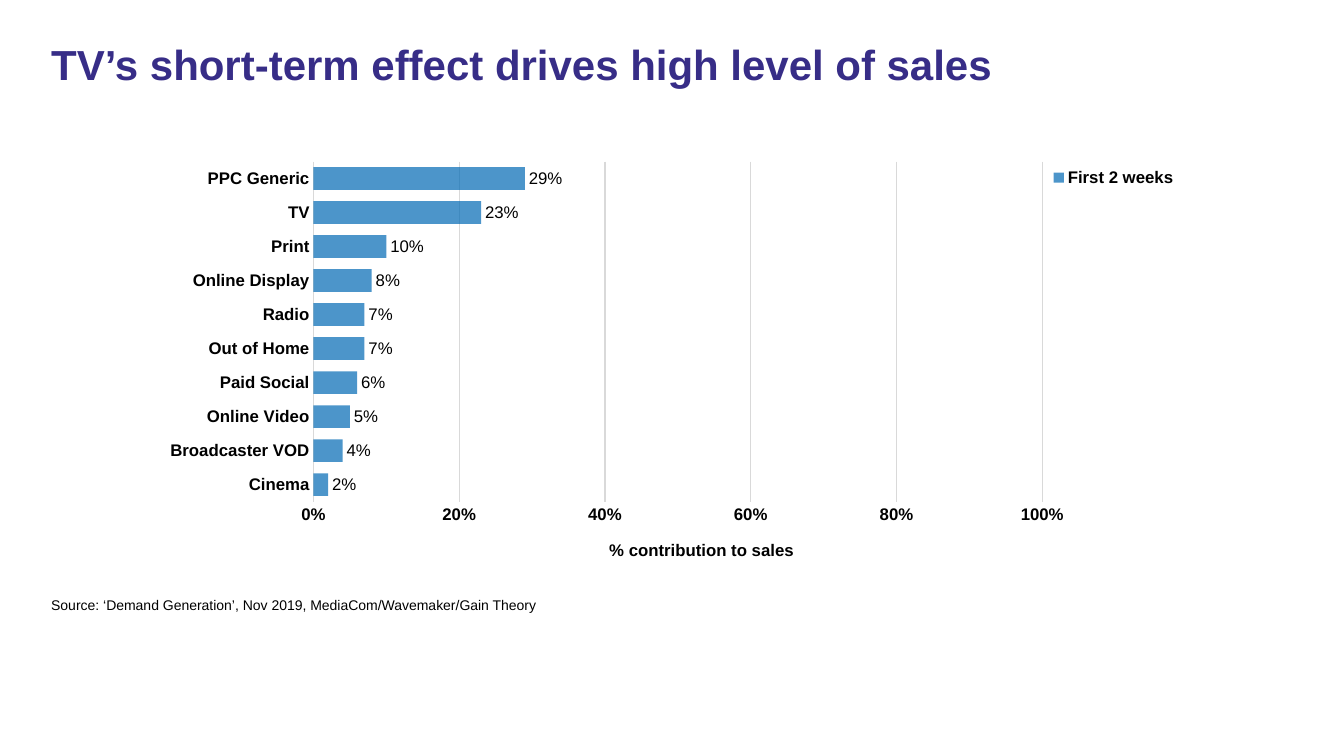
"""Build the slide on TV's short-term contribution to sales."""
from dataclasses import dataclass

from lxml import etree
from pptx import Presentation
from pptx.chart.data import CategoryChartData
from pptx.dml.color import RGBColor
from pptx.enum.chart import (XL_CHART_TYPE as ChartType, XL_LABEL_POSITION as LabelPos,
                             XL_LEGEND_POSITION as LegendPos, XL_TICK_MARK as TickMark)
from pptx.oxml.ns import qn
from pptx.util import Inches, Pt


@dataclass(frozen=True)
class Theme:
    font: str = "Arial"
    title: RGBColor = RGBColor.from_string("372D87")
    text: RGBColor = RGBColor.from_string("000000")
    bar: RGBColor = RGBColor.from_string("0069B4")
    grid: RGBColor = RGBColor.from_string("D9D9D9")
    title_size: int = 30
    chart_size: int = 12
    source_size: int = 10


theme = Theme()


def style(font, size, color=theme.text, bold=False):
    font.name, font.size, font.bold = theme.font, Pt(size), bold
    font.color.rgb = color


def place(element, index, **fractions):
    for old in element.findall(qn("c:layout")):
        element.remove(old)
    layout = etree.Element(qn("c:layout"))
    manual = etree.SubElement(layout, qn("c:manualLayout"))
    if "w" in fractions:
        etree.SubElement(manual, qn("c:layoutTarget")).set("val", "inner")
    for axis in "xy":
        etree.SubElement(manual, qn(f"c:{axis}Mode")).set("val", "edge")
    for key, value in fractions.items():
        etree.SubElement(manual, qn(f"c:{key}")).set("val", str(value))
    element.insert(index, layout)


prs = Presentation()
prs.slide_width, prs.slide_height = Inches(13.33), Inches(7.5)
s = prs.slides.add_slide(prs.slide_layouts[6])

texts = [
    ("TV’s short-term effect drives high level of sales",
     0.39, 1.12, theme.title_size, theme.title, True, 0.9),
    ("Source: ‘Demand Generation’, Nov 2019, MediaCom/Wavemaker/Gain Theory",
     5.87, 0.33, theme.source_size, theme.text, False, 1.0),
]
for text, top, height, size, color, bold, spacing in texts:
    tf = s.shapes.add_textbox(Inches(0.41), Inches(top), Inches(12.4), Inches(height)).text_frame
    tf.word_wrap = True
    tf.text = text
    p = tf.paragraphs[0]
    p.line_spacing = spacing
    style(p.runs[0].font, size, color, bold)

sales_share = {
    "Cinema": 0.02, "Broadcaster VOD": 0.04, "Online Video": 0.05, "Paid Social": 0.06,
    "Out of Home": 0.07, "Radio": 0.07, "Online Display": 0.08, "Print": 0.1,
    "TV": 0.23, "PPC Generic": 0.29,
}
data = CategoryChartData(number_format="0%")
data.categories = list(sales_share)
data.add_series("First 2 weeks", list(sales_share.values()))
chart = s.shapes.add_chart(ChartType.BAR_CLUSTERED, Inches(0.68), Inches(1.41),
                           Inches(11.85), Inches(4.5), data).chart
style(chart.font, theme.chart_size)
chart.has_title = False
place(chart.plots[0]._element.getparent(), 0, x=0.205, y=0.043, w=0.61, h=0.75)

plot = chart.plots[0]
plot.gap_width = 50
plot.vary_by_categories = False
fill = plot.series[0].format.fill
fill.solid()
fill.fore_color.rgb = theme.bar
bar_color = plot.series[0]._element.find(".//" + qn("a:srgbClr"))
etree.SubElement(bar_color, qn("a:alpha")).set("val", "70000")

plot.has_data_labels = True
labels = plot.data_labels
labels.show_value = True
labels.number_format, labels.number_format_is_linked = "0%", False
labels.position = LabelPos.OUTSIDE_END
style(labels.font, theme.chart_size)

for axis in (chart.category_axis, chart.value_axis):
    axis.major_tick_mark = axis.minor_tick_mark = TickMark.NONE
    axis.format.line.fill.background()
    style(axis.tick_labels.font, theme.chart_size, bold=True)

share_axis = chart.value_axis
share_axis.minimum_scale, share_axis.maximum_scale, share_axis.major_unit = 0, 1, 0.2
share_axis.tick_labels.number_format = "0%"
share_axis.tick_labels.number_format_is_linked = False
share_axis.has_major_gridlines = True
grid_line = share_axis.major_gridlines.format.line
grid_line.color.rgb, grid_line.width = theme.grid, Pt(0.75)

tf = share_axis.axis_title.text_frame
tf.text = "% contribution to sales"
style(tf.paragraphs[0].runs[0].font, theme.chart_size, bold=True)
place(share_axis.axis_title._element, 1, x=0.45, y=0.87)

chart.has_legend = True
legend = chart.legend
legend.position = LegendPos.RIGHT
legend.include_in_layout = False
style(legend.font, theme.chart_size, bold=True)
place(legend._element, 1, x=0.82, y=0.05)

prs.save("out.pptx")
